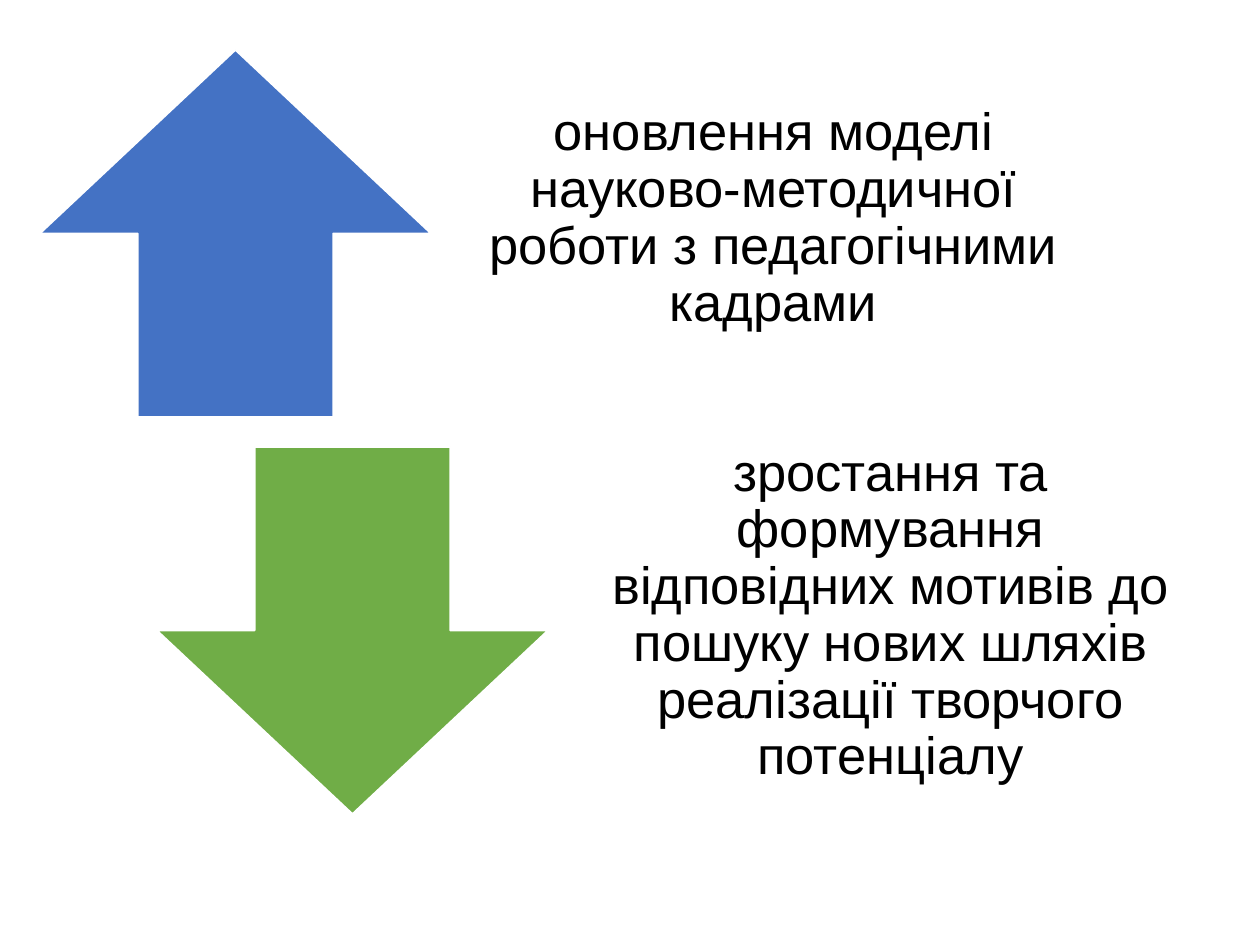
"""Build a slide with an up arrow and a down arrow, each beside its statement."""
from pptx import Presentation
from pptx import util as u
from pptx.dml.color import RGBColor
from pptx.enum import shapes, text

PX = u.Inches(1) / 126
COLORS = {"up": "4472C4", "down": "70AD47", "outline": "FFFFFF", "text": "000000"}
ARROW_WIDTH, TEXT_WIDTH, HEIGHT = 391, 663, 367
TEXT_OFFSET = 402
SIDE_INSET, BOTTOM_INSET = 30, 29
ROWS = [
    ("up", shapes.MSO_SHAPE.UP_ARROW, 40, 50,
     "оновлення моделі науково-методичної роботи з педагогічними кадрами"),
    ("down", shapes.MSO_SHAPE.DOWN_ARROW, 157, 447,
     "зростання та формування відповідних мотивів до пошуку нових шляхів "
     "реалізації творчого потенціалу"),
]


def px(*lengths):
    return [u.Emu(round(length * PX)) for length in lengths]


deck = Presentation()
deck.slide_width, deck.slide_height = px(1260, 945)
page = deck.slides.add_slide(deck.slide_layouts[6])

for color, kind, left, top, statement in ROWS:
    arrow = page.shapes.add_shape(kind, *px(left, top, ARROW_WIDTH, HEIGHT))
    arrow.shadow.inherit = False
    arrow.fill.solid()
    arrow.fill.fore_color.rgb = RGBColor.from_string(COLORS[color])
    arrow.line.color.rgb = RGBColor.from_string(COLORS["outline"])
    arrow.line.width = u.Pt(1)

    box = page.shapes.add_textbox(*px(left + TEXT_OFFSET, top, TEXT_WIDTH, HEIGHT))
    frame = box.text_frame
    frame.word_wrap = True
    frame.vertical_anchor = text.MSO_ANCHOR.MIDDLE
    frame.margin_left, frame.margin_top, frame.margin_right, frame.margin_bottom = px(
        SIDE_INSET, 0, SIDE_INSET, BOTTOM_INSET)
    para = frame.paragraphs[0]
    para.alignment = text.PP_ALIGN.CENTER
    para.line_spacing = 0.9
    span = para.add_run()
    span.text = statement
    span.font.name = "Arial"
    span.font.size = u.Pt(30)
    span.font.color.rgb = RGBColor.from_string(COLORS["text"])

deck.save("out.pptx")
